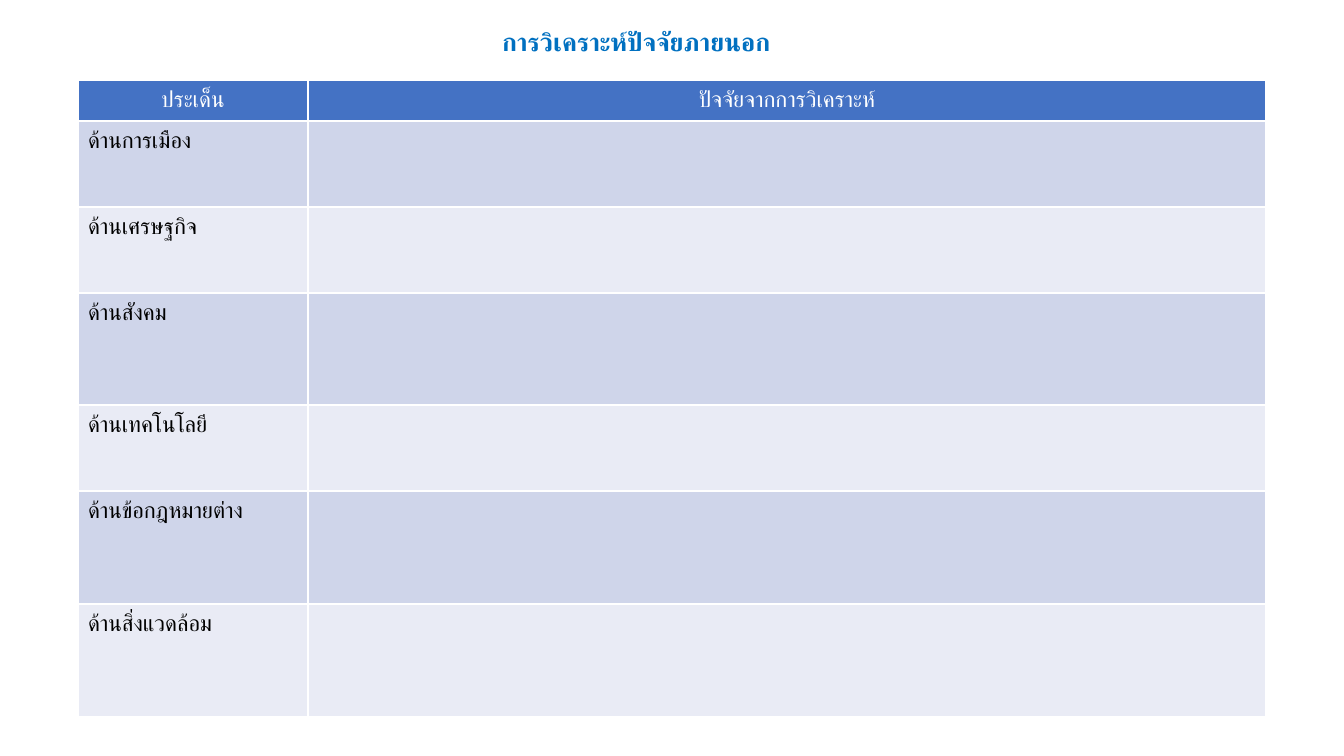
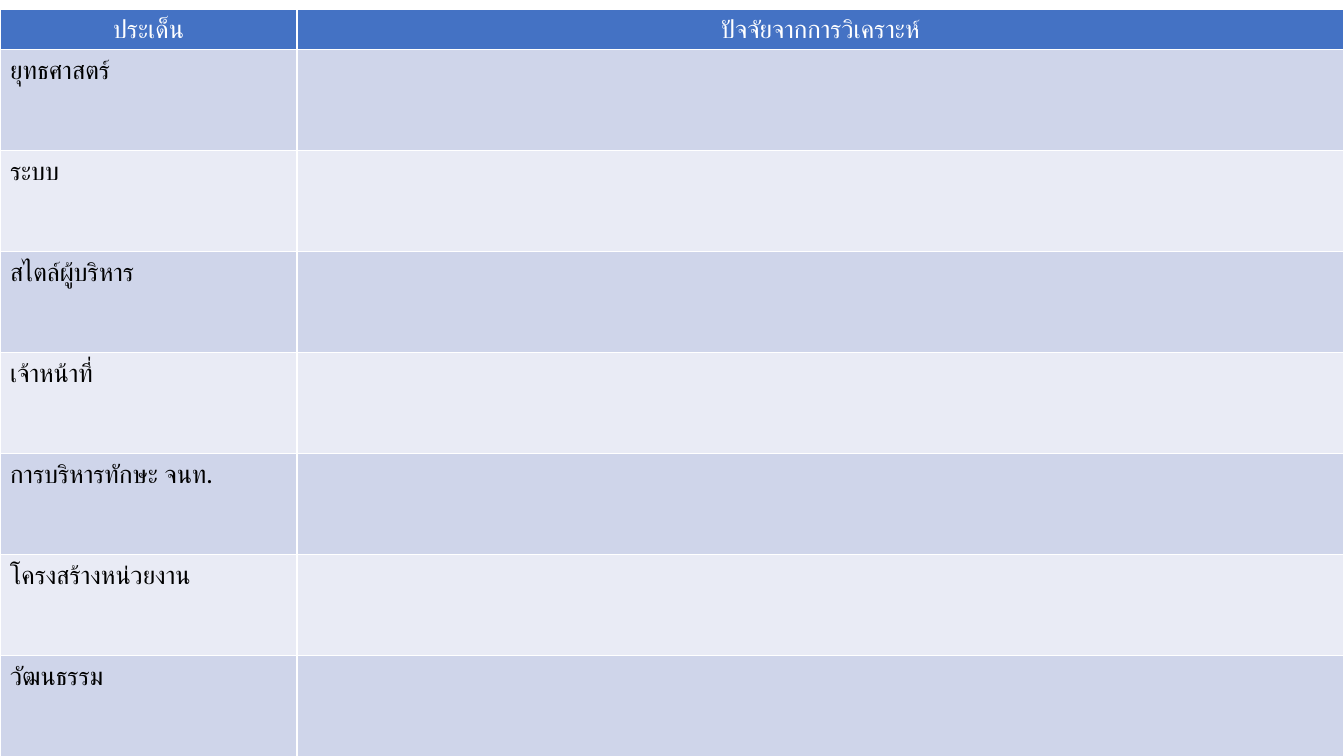
"""Builds two analysis worksheets, each with a two-column table."""
from pptx import Presentation
from pptx.dml.color import RGBColor
from pptx.enum.lang import MSO_LANGUAGE_ID
from pptx.enum.text import MSO_ANCHOR, MSO_AUTO_SIZE, PP_ALIGN
from pptx.oxml.ns import qn
from pptx.util import Pt
from lxml.etree import SubElement

EMU_PER_INCH = 914400
PX_PER_INCH = 100.8
FONT = "Lato"
WHITE = RGBColor(0xFF, 0xFF, 0xFF)
BLACK = RGBColor(0x00, 0x00, 0x00)
TITLE_BLUE = RGBColor(0x00, 0x70, 0xC0)
HEADER_BLUE = RGBColor(0x44, 0x72, 0xC4)
BANDS = (RGBColor(0xE9, 0xEB, 0xF5), RGBColor(0xCF, 0xD5, 0xEA))

TITLE_ONLY_LAYOUT, BLANK_LAYOUT = 5, 6
HEADINGS = ("ประเด็น", "ปัจจัยจากการวิเคราะห์")
EXTERNAL_TITLE = "การวิเคราะห์ปัจจัยภายนอก"
EXTERNAL_TOPICS = {
    "ด้านการเมือง": 86,
    "ด้านเศรษฐกิจ": 86,
    "ด้านสังคม": 112,
    "ด้านเทคโนโลยี": 86,
    "ด้านข้อกฎหมายต่าง": 113,
    "ด้านสิ่งแวดล้อม": 113,
}
INTERNAL_TOPICS = dict.fromkeys((
    "ยุทธศาสตร์",
    "ระบบ",
    "สไตล์ผู้บริหาร",
    "เจ้าหน้าที่",
    "การบริหารทักษะ จนท.",
    "โครงสร้างหน่วยงาน",
    "วัฒนธรรม",
), 101)


def px(length):
    return round(length * EMU_PER_INCH / PX_PER_INCH)


def write_text(text_frame, text, size, color, bold=False, alignment=PP_ALIGN.LEFT):
    paragraph = text_frame.paragraphs[0]
    paragraph.alignment = alignment
    run = paragraph.add_run()
    run.text = text
    formats = {
        "name": FONT,
        "size": Pt(size),
        "bold": bold,
        "language_id": MSO_LANGUAGE_ID.THAI,
    }
    for attribute, value in formats.items():
        setattr(run.font, attribute, value)
    run.font.color.rgb = color
    complex_script = SubElement(run.font._element, qn("a:cs"))
    complex_script.set("typeface", FONT)


def place_title(slide, text, left, top, width, height):
    title = slide.shapes.title
    position = {"left": left, "top": top, "width": width, "height": height}
    for attribute, value in position.items():
        setattr(title, attribute, px(value))
    frame_formats = {
        "word_wrap": False,
        "auto_size": MSO_AUTO_SIZE.NONE,
        "vertical_anchor": MSO_ANCHOR.TOP,
    }
    for attribute, value in frame_formats.items():
        setattr(title.text_frame, attribute, value)
    write_text(title.text_frame, text, 18, TITLE_BLUE, bold=True)


def fill_cell(cell, color):
    cell.fill.solid()
    cell.fill.fore_color.rgb = color


def add_topic_table(slide, topics, left, top, column_widths, header_height, size):
    heights = (header_height, *topics.values())
    table = slide.shapes.add_table(
        len(heights), len(column_widths), px(left), px(top),
        px(sum(column_widths)), px(sum(heights)),
    ).table
    for column, width in zip(table.columns, column_widths):
        column.width = px(width)
    for row, height in zip(table.rows, heights):
        row.height = px(height)
    for cell, heading in zip(table.rows[0].cells, HEADINGS):
        fill_cell(cell, HEADER_BLUE)
        write_text(cell.text_frame, heading, size, WHITE, alignment=PP_ALIGN.CENTER)
    for number, topic in enumerate(topics, start=1):
        for cell in table.rows[number].cells:
            fill_cell(cell, BANDS[number % 2])
        write_text(table.cell(number, 0).text_frame, topic, size, BLACK)


def main():
    presentation = Presentation()
    presentation.slide_width, presentation.slide_height = px(1344), px(756)
    layouts = presentation.slide_layouts

    external = presentation.slides.add_slide(layouts[TITLE_ONLY_LAYOUT])
    add_topic_table(external, EXTERNAL_TOPICS, 78, 80, (230, 958), 41, 16)
    place_title(external, EXTERNAL_TITLE, 492, 21, 326, 40)

    internal = presentation.slides.add_slide(layouts[BLANK_LAYOUT])
    add_topic_table(internal, INTERNAL_TOPICS, 0, 9, (297, 1047), 40, 18)

    presentation.save("out.pptx")


if __name__ == "__main__":
    main()
